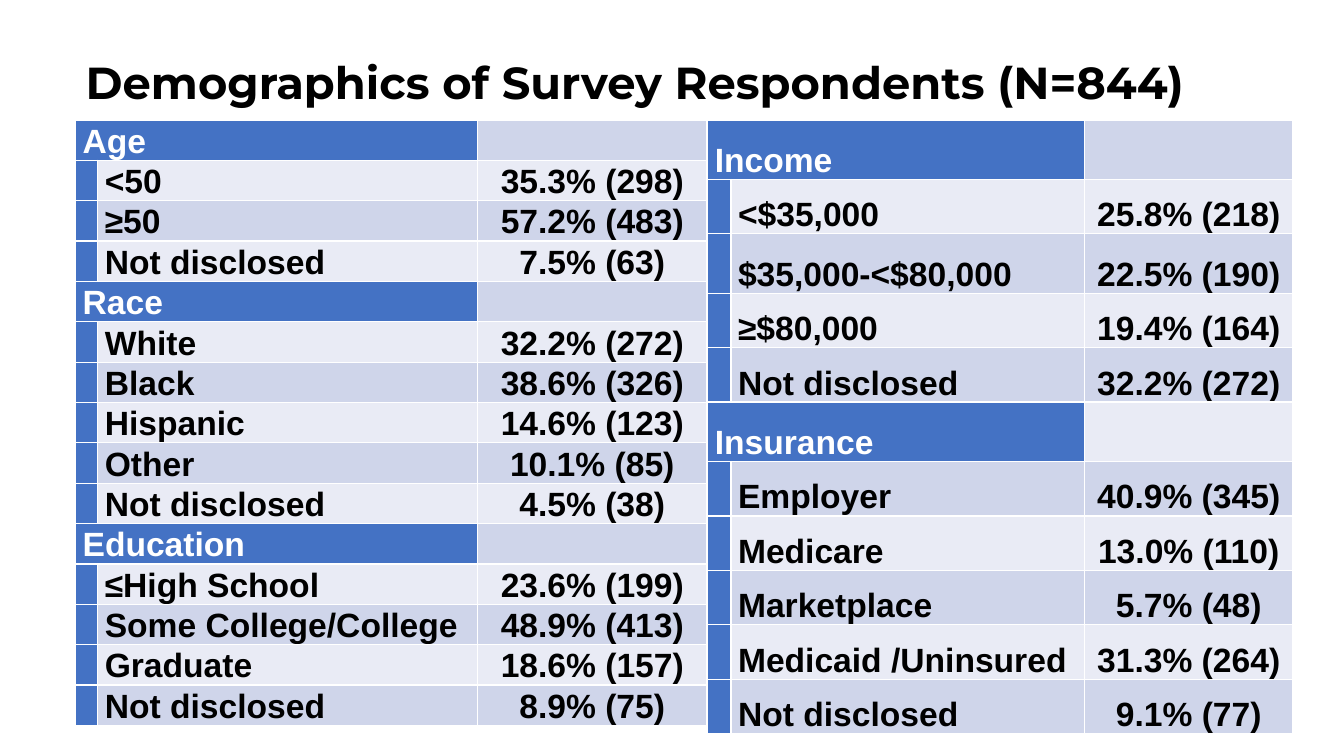
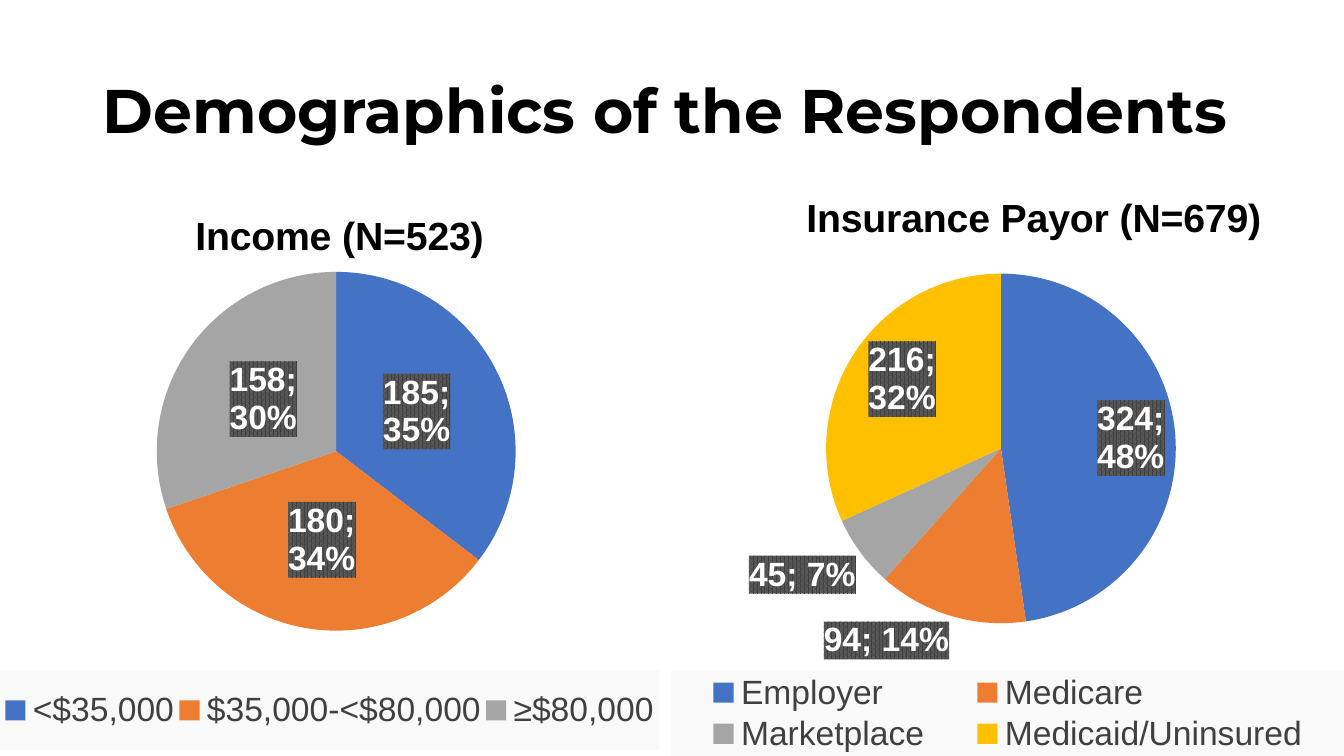
from pptx import Presentation
from pptx.chart.data import CategoryChartData as ChartData
from pptx.dml.color import RGBColor
from pptx.enum.chart import XL_CHART_TYPE as ChartType
from pptx.enum.chart import XL_LABEL_POSITION as LabelPos
from pptx.enum.chart import XL_LEGEND_POSITION as LegendPos
from pptx.enum.text import MSO_ANCHOR as Anchor
from pptx.enum.text import PP_ALIGN as Align
from pptx.oxml import parse_xml
from pptx.oxml.ns import qn
from pptx.util import Inches, Pt

# Shared look
BLACK = RGBColor(0x00, 0x00, 0x00)
WHITE = RGBColor(0xFF, 0xFF, 0xFF)
GREY = RGBColor(0x40, 0x40, 0x40)
BLUE = RGBColor(0x44, 0x72, 0xC4)
BANDS = RGBColor(0xCF, 0xD5, 0xEA), RGBColor(0xE9, 0xEB, 0xF5)
SLICES = (BLUE, RGBColor(0xED, 0x7D, 0x31), RGBColor(0xA5, 0xA5, 0xA5),
          RGBColor(0xFF, 0xC0, 0x00))
TITLE = {"name": "Montserrat", "bold": True}
BOLD = {"name": "Arial", "size": Pt(24), "bold": True}
PLAIN = {"name": "Arial", "size": Pt(24), "bold": False}
CELL = {"margin_left": Inches(0.07), "margin_right": Inches(0.07),
        "margin_top": 0, "margin_bottom": 0,
        "vertical_anchor": Anchor.BOTTOM}
NS = ('xmlns:a="http://schemas.openxmlformats.org/drawingml/2006/main" '
      'xmlns:c="http://schemas.openxmlformats.org/drawingml/2006/chart"')
LEGEND_FILL = ('<a:solidFill><a:srgbClr val="F2F2F2"><a:alpha val="39000"/>'
               '</a:srgbClr></a:solidFill>')
LABEL_FILL = ('<a:pattFill prst="pct75"><a:fgClr><a:srgbClr val="404040"/>'
              '</a:fgClr><a:bgClr><a:srgbClr val="595959"/></a:bgClr>'
              '</a:pattFill>')

# Table content: a name without a value heads a group
LEFT = [
    ("Age", None), ("<50", "35.3% (298)"), ("≥50", "57.2% (483)"),
    ("Not disclosed", "7.5% (63)"),
    ("Race", None), ("White", "32.2% (272)"), ("Black", "38.6% (326)"),
    ("Hispanic", "14.6% (123)"), ("Other", "10.1% (85)"),
    ("Not disclosed", "4.5% (38)"),
    ("Education", None), ("≤High School", "23.6% (199)"),
    ("Some College/College", "48.9% (413)"), ("Graduate", "18.6% (157)"),
    ("Not disclosed", "8.9% (75)"),
]
RIGHT = [
    ("Income", None), ("<$35,000", "25.8% (218)"),
    ("$35,000-<$80,000", "22.5% (190)"), ("≥$80,000", "19.4% (164)"),
    ("Not disclosed", "32.2% (272)"),
    ("Insurance", None), ("Employer", "40.9% (345)"),
    ("Medicare", "13.0% (110)"), ("Marketplace", "5.7% (48)"),
    ("Medicaid /Uninsured", "31.3% (264)"), ("Not disclosed", "9.1% (77)"),
]


def apply(obj, values):
    for name, value in values.items():
        setattr(obj, name, value)


def style(font, values, color):
    apply(font, values)
    font.color.rgb = color


def inches(box):
    return [Inches(n) for n in box]


def add_title(slide, text, box, size):
    frame = slide.shapes.add_textbox(*inches(box)).text_frame
    frame.word_wrap = True
    frame.vertical_anchor = Anchor.MIDDLE
    para = frame.paragraphs[0]
    para.line_spacing = 0.9
    run = para.add_run()
    run.text = text
    style(run.font, {**TITLE, "size": Pt(size)}, BLACK)


# Tables
def paint(cell, color):
    apply(cell, CELL)
    props = cell._tc.get_or_add_tcPr()
    for side in "LRTB":
        props.append(parse_xml(
            f'<a:ln{side} {NS} w="12700"><a:solidFill>'
            f'<a:srgbClr val="{WHITE}"/></a:solidFill></a:ln{side}>'))
    cell.fill.solid()
    cell.fill.fore_color.rgb = color


def write(cell, text, color, align=Align.LEFT):
    para = cell.text_frame.paragraphs[0]
    apply(para, {"alignment": align, "line_spacing": 1.0})
    run = para.add_run()
    run.text = text
    style(run.font, BOLD, color)


def add_grid(slide, rows, left, widths, heights):
    box = left, 1.19, sum(widths), sum(heights)
    table = slide.shapes.add_table(len(rows), 3, *inches(box)).table
    apply(table, {"first_row": False, "horz_banding": False})
    for col, width in zip(table.columns, widths):
        col.width = Inches(width)
    for i, (name, value) in enumerate(rows):
        table.rows[i].height = Inches(heights[i])
        mark, label, count = (table.cell(i, j) for j in range(3))
        band = BANDS[i % 2]
        for cell, color in ((mark, BLUE), (label, band), (count, band)):
            paint(cell, color)
        if value is None:
            mark.merge(label)
            write(mark, name, WHITE)
        else:
            write(label, name, BLACK)
            write(count, value, BLACK, Align.CENTER)


# Charts
def place(part, inner=False, **box):
    """Give a chart part a fixed place, as shares of the chart area."""
    old = part.find(qn("c:layout"))
    if old is not None:
        part.remove(old)
    tags = '<c:layoutTarget val="inner"/>' if inner else ""
    tags += "".join(f'<c:{k}Mode val="edge"/>' for k in "xy")
    tags += "".join(f'<c:{k} val="{v}"/>' for k, v in box.items())
    layout = parse_xml(f"<c:layout {NS}><c:manualLayout>{tags}"
                       "</c:manualLayout></c:layout>")
    over = part.find(qn("c:overlay"))
    if over is None:
        part.insert(0, layout)
    else:
        over.addprevious(layout)


def backing(fill):
    return parse_xml(f"<c:spPr {NS}>{fill}</c:spPr>")


def add_labels(series, spot):
    labels = series.data_labels
    apply(labels, {"show_value": True, "show_percentage": True,
                   "position": spot})
    style(labels.font, BOLD, WHITE)
    root = labels._element
    root.find(qn("c:txPr")).addprevious(backing(LABEL_FILL))
    root.find(qn("c:showBubbleSize")).addnext(
        parse_xml(f"<c:separator {NS}>; </c:separator>"))


def add_pie(slide, left, title, values, spot, head, plot, legend):
    data = ChartData()
    data.categories = list(values)
    data.add_series("Series 1", list(values.values()))
    box = inches((left, 1.85, 6.67, 5.65))
    chart = slide.shapes.add_chart(ChartType.PIE, *box, data).chart
    style(chart.font, {"name": "Arial", "size": Pt(10)}, BLACK)

    # Heading
    chart.has_title = True
    run = chart.chart_title.text_frame.paragraphs[0].add_run()
    run.text = title
    style(run.font, {**BOLD, "size": Pt(28)}, BLACK)
    place(chart.chart_title._element, **head)

    # Slices
    pie = chart.plots[0]
    pie.vary_by_categories = True
    series = pie.series[0]
    for i, color in enumerate(SLICES[:len(values)]):
        fill = series.points[i].format.fill
        fill.solid()
        fill.fore_color.rgb = color
    add_labels(series, spot)
    place(chart._chartSpace.chart.plotArea, inner=True, **plot)

    # Legend
    chart.has_legend = True
    apply(chart.legend, {"position": LegendPos.BOTTOM,
                         "include_in_layout": False})
    style(chart.legend.font, PLAIN, GREY)
    root = chart.legend._element
    place(root, **legend)
    root.find(qn("c:overlay")).addnext(backing(LEGEND_FILL))


def main():
    deck = Presentation()
    apply(deck, {"slide_width": Inches(13.33), "slide_height": Inches(7.5)})
    blank = deck.slide_layouts[6]

    # Tables of respondents
    slide = deck.slides.add_slide(blank)
    add_title(slide, "Demographics of Survey Respondents (N=844)",
              (0.75, 0.12, 11.84, 1.45), 32)
    add_grid(slide, LEFT, 0.75, (0.22, 3.77, 2.27), [0.4] * len(LEFT))
    tall = 0, 2, 5
    add_grid(slide, RIGHT, 7.02, (0.23, 3.51, 2.06),
             [0.59 if i in tall else 0.54 for i in range(len(RIGHT))])

    # Pies of income and insurance
    slide = deck.slides.add_slide(blank)
    add_title(slide, "Demographics of the Respondents",
              (0.92, 0.4, 11.89, 1.45), 44)
    add_pie(slide, 0, "Income (N=523)",
            {"<$35,000": 185, "$35,000-<$80,000": 180, "≥$80,000": 158},
            LabelPos.CENTER,
            {"x": 0.28, "y": 0.03},
            {"x": 0.23, "y": 0.15, "w": 0.54, "h": 0.63},
            {"x": 0, "y": 0.85, "w": 0.98, "h": 0.14})
    add_pie(slide, 6.66, "Insurance Payor (N=679)",
            {"Employer": 324, "Medicare": 94, "Marketplace": 45,
             "Medicaid/Uninsured": 216},
            LabelPos.BEST_FIT,
            {"x": 0.19, "y": 0},
            {"x": 0.23, "y": 0.15, "w": 0.52, "h": 0.62},
            {"x": 0, "y": 0.85, "w": 1, "h": 0.15})
    deck.save("out.pptx")


if __name__ == "__main__":
    main()
